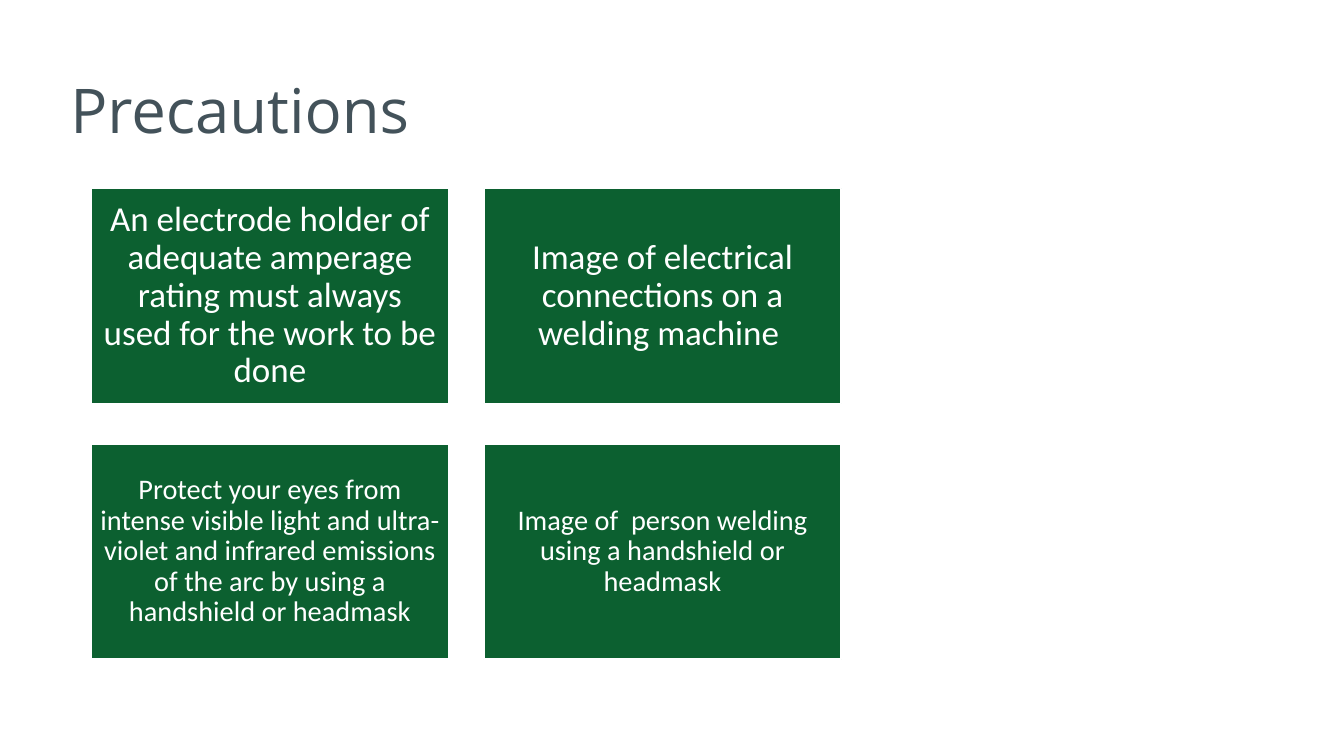
import pptx
import pptx.util
import pptx.dml.color
import pptx.enum.shapes
import pptx.enum.text

Cm, Pt = pptx.util.Cm, pptx.util.Pt

# Content
TITLE = "Precautions"
# Each row: text size in points, inset in cm, box texts
ROWS = [
    (21, 0.23, [
        "An electrode holder of adequate amperage rating must always used for the work to be done",
        "Image of electrical connections on a welding machine ",
    ]),
    (17, 0.18, [
        "Protect your eyes from intense visible light and ultra-violet and infrared emissions of the arc by using a handshield or headmask",
        "Image of  person welding using a handshield or headmask",
    ]),
]
GREEN, WHITE, SLATE = "0C6030", "FFFFFF", "43525A"

# Grid in cm
LEFT, TOP = 1.93, 3.99
WIDE, HIGH = 7.57, 4.55
GAP_X, GAP_Y = 0.74, 0.86


def paint(color, code):
    color.rgb = pptx.dml.color.RGBColor.from_string(code)


def write(shape, text, font, size, code, align):
    frame = shape.text_frame
    frame.word_wrap = True
    frame.vertical_anchor = pptx.enum.text.MSO_ANCHOR.MIDDLE
    frame.text = text
    para = frame.paragraphs[0]
    para.alignment = align
    para.line_spacing = 0.9
    run = para.runs[0]
    run.font.name = font
    run.font.size = Pt(size)
    paint(run.font.color, code)


def add_box(slide, x, y, text, size, inset):
    box = slide.shapes.add_shape(
        pptx.enum.shapes.MSO_SHAPE.RECTANGLE, Cm(x), Cm(y), Cm(WIDE), Cm(HIGH))
    box.shadow.inherit = False
    box.fill.solid()
    paint(box.fill.fore_color, GREEN)
    paint(box.line.color, WHITE)
    box.line.width = Pt(1)
    frame = box.text_frame
    frame.margin_left = frame.margin_right = Cm(inset)
    frame.margin_top = frame.margin_bottom = Cm(inset)
    write(box, text, "Calibri", size, WHITE, pptx.enum.text.PP_ALIGN.CENTER)


def main():
    deck = pptx.Presentation()
    deck.slide_width, deck.slide_height = Cm(28.45), Cm(16)
    slide = deck.slides.add_slide(deck.slide_layouts[6])

    # Title
    head = slide.shapes.add_textbox(Cm(1.24), Cm(0.86), Cm(24.54), Cm(3.1))
    write(head, TITLE, "Open Sans", 37, SLATE, pptx.enum.text.PP_ALIGN.LEFT)

    # Boxes
    for row, (size, inset, texts) in enumerate(ROWS):
        for col, text in enumerate(texts):
            x = LEFT + col * (WIDE + GAP_X)
            y = TOP + row * (HIGH + GAP_Y)
            add_box(slide, x, y, text, size, inset)

    deck.save("out.pptx")


if __name__ == "__main__":
    main()
